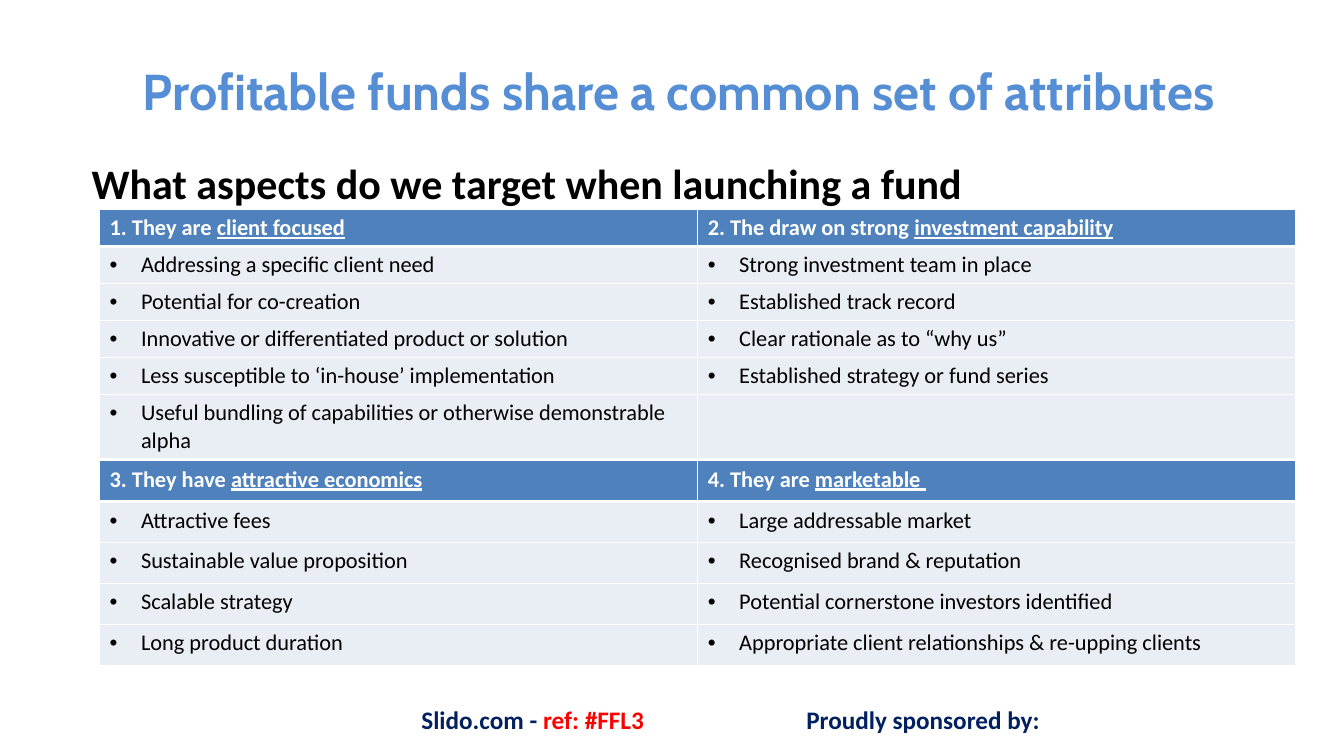
import pptx
import pptx.util
import pptx.dml.color
import pptx.enum.text
from lxml import etree
from pptx.util import Cm, Pt

HUES = {"title": "558ED5", "head": "4F81BD", "row": "E9EDF4", "white": "FFFFFF",
        "black": "000000", "navy": "002060", "red": "FF0000"}
NS = "http://schemas.openxmlformats.org/drawingml/2006/main"
ALIGN = pptx.enum.text.PP_ALIGN

TOP = [
    (("1. They are ", "client focused"), ("2. The draw on strong ", "investment capability")),
    ("Addressing a specific client need", "Strong investment team in place"),
    ("Potential for co-creation", "Established track record"),
    ("Innovative or differentiated product or solution", "Clear rationale as to “why us”"),
    ("Less susceptible to ‘in-house’ implementation", "Established strategy or fund series"),
    ("Useful bundling of capabilities or otherwise demonstrable alpha", ""),
]
LOW = [
    (("3. They have ", "attractive economics"), ("4. They are ", "marketable ")),
    ("Attractive fees", "Large addressable market"),
    ("Sustainable value proposition", "Recognised brand & reputation"),
    ("Scalable strategy", "Potential cornerstone investors identified"),
    ("Long product duration", "Appropriate client relationships & re-upping clients"),
]


def tint(hue):
    """Return the named colour."""
    return pptx.dml.color.RGBColor.from_string(HUES[hue])


def style(para, size, hue, bold=True, face="Calibri"):
    """Set the font of a paragraph."""
    font = para.font
    font.name, font.size, font.bold = face, Pt(size), bold
    font.color.rgb = tint(hue)


def add_title(slide, box, text):
    """Place and format the title."""
    title = slide.shapes.title
    title.left, title.top, title.width, title.height = map(Cm, box)
    frame = title.text_frame
    frame.text = text
    frame.vertical_anchor = pptx.enum.text.MSO_ANCHOR.MIDDLE
    para = frame.paragraphs[0]
    para.alignment = ALIGN.CENTER
    style(para, 36, "title", face="Cabin")


def add_label(slide, box, text, size, hue, align=ALIGN.LEFT):
    """Add a one-line text box and return its paragraph."""
    frame = slide.shapes.add_textbox(*map(Cm, box)).text_frame
    frame.word_wrap = True
    para = frame.paragraphs[0]
    para.add_run().text = text
    para.alignment = align
    style(para, size, hue)
    return para


def add_edges(cell, base):
    """Draw white borders around a cell, with its bottom line of the given width."""
    props = cell._tc.get_or_add_tcPr()
    for side, width in (("L", 1), ("R", 1), ("T", 1), ("B", base)):
        line = etree.SubElement(props, f"{{{NS}}}ln{side}", w=str(Pt(width)))
        fill = etree.SubElement(line, f"{{{NS}}}solidFill")
        etree.SubElement(fill, f"{{{NS}}}srgbClr", val=HUES["white"])


def fill_cell(cell, text, head):
    """Write a heading or a bullet into a cell."""
    add_edges(cell, 3 if head else 1)
    cell.fill.solid()
    cell.fill.fore_color.rgb = tint("head" if head else "row")
    para = cell.text_frame.paragraphs[0]
    if head:
        lead, key = text
        para.add_run().text = lead
        run = para.add_run()
        run.text = key
        run.font.underline = True
    elif text:
        para.add_run().text = text
        props = para._p.get_or_add_pPr()
        props.set("marL", str(Cm(0.79)))
        props.set("indent", str(-Cm(0.79)))
        etree.SubElement(props, f"{{{NS}}}buFont", typeface="Arial")
        etree.SubElement(props, f"{{{NS}}}buChar", char="•")
    style(para, 16, "white" if head else "black", bold=head)


def add_grid(slide, box, rows, highs):
    """Add a two-column table with a heading row."""
    left, top, width = box
    grid = slide.shapes.add_table(len(rows), 2, Cm(left), Cm(top), Cm(width), Cm(sum(highs))).table
    for col in grid.columns:
        col.width = Cm(width / 2)
    for i, (texts, high) in enumerate(zip(rows, highs)):
        grid.rows[i].height = Cm(high)
        for j, text in enumerate(texts):
            fill_cell(grid.cell(i, j), text, i == 0)


def add_foot(slide, box):
    """Add the two footer labels along the bottom."""
    left, top, width, high = box
    para = add_label(slide, (left, top, 10.69, high), "Slido.com - ", 18, "navy", ALIGN.CENTER)
    run = para.add_run()
    run.text = "ref: #FFL3"
    run.font.color.rgb = tint("red")
    wide = 6.65
    add_label(slide, (left + width - wide, top, wide, high), "Proudly sponsored by:", 18, "navy")


def main():
    """Build and save the slide."""
    deck = pptx.Presentation()
    deck.slide_width, deck.slide_height = Cm(33.87), Cm(19.05)
    slide = deck.slides.add_slide(deck.slide_layouts[5])
    add_foot(slide, (8.08, 17.63, 18.64, 1.02))
    add_title(slide, (2.03, 0.76, 30.15, 3.05), "Profitable funds share a common set of attributes")
    add_label(slide, (2.06, 3.84, 30.48, 12.65),
              "What aspects do we target when launching a fund", 30, "black")
    add_grid(slide, (2.51, 5.28, 30.15), TOP, [0.89] * 5 + [1.57])
    add_grid(slide, (2.51, 11.61, 30.15), LOW, [1.03] * 5)
    deck.save("out.pptx")


if __name__ == "__main__":
    main()
